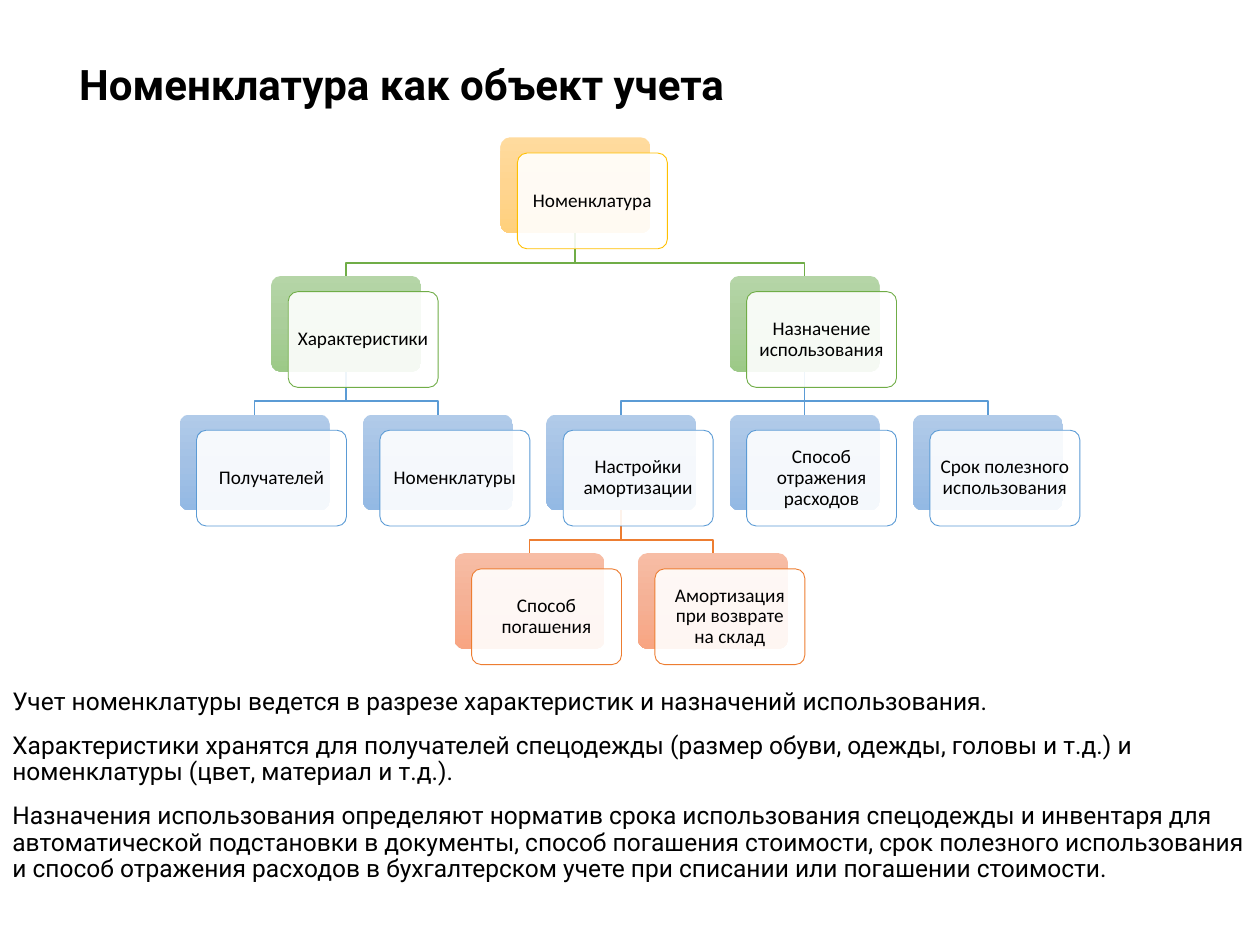
import copy
from dataclasses import dataclass

import pptx
import pptx.dml.color
import pptx.enum.shapes
import pptx.enum.text
import pptx.oxml.ns
import pptx.util
from lxml import etree

Inches = pptx.util.Inches
Pt = pptx.util.Pt
qn = pptx.oxml.ns.qn
rgb = pptx.dml.color.RGBColor.from_string
Kind = pptx.enum.shapes.MSO_SHAPE
Align = pptx.enum.text.PP_ALIGN
Anchor = pptx.enum.text.MSO_ANCHOR


@dataclass(frozen=True)
class Theme:
    ink: str = "000000"
    paper: str = "FFFFFF"
    font: str = "Roboto"
    card_font: str = "Calibri"
    head: int = 24
    body: int = 14
    card: int = 11
    # One entry per tree level: outline, and the three stops of the back card
    lines: tuple = ("FFC000", "70AD47", "5B9BD5", "ED7D31")
    fades: tuple = (
        ("FFDB9E", "FFD590", "FFD07C"),
        ("B5D5A7", "AACE9A", "9CC987"),
        ("B1CBE9", "A3C1E5", "93B9E4"),
        ("F7BDA5", "F5B196", "F8A582"),
    )


THEME = Theme()

CARD_W, CARD_H = 1.19, 0.76
LEFT, TOP = 2.02, 1.09  # centre of column 0, top of level 0
COL, ROW = 1.455, 1.1
SHIFT_X, SHIFT_Y = 0.135, 0.125
BEND = 0.235

# Label, column, level, index of the parent
NODES = [
    ("Номенклатура", 1.75, 0, None),
    ("Характеристики", 0.5, 1, 0),
    ("Назначение использования", 3, 1, 0),
    ("Получателей", 0, 2, 1),
    ("Номенклатуры", 1, 2, 1),
    ("Настройки амортизации", 2, 2, 2),
    ("Способ отражения расходов", 3, 2, 2),
    ("Срок полезного использования", 4, 2, 2),
    ("Способ погашения", 1.5, 3, 5),
    ("Амортизация при возврате на склад", 2.5, 3, 5),
]

TITLE = "Номенклатура как объект учета"
NOTES = [
    "Учет номенклатуры ведется в разрезе характеристик и назначений использования.",
    "Характеристики хранятся для получателей спецодежды (размер обуви, одежды, "
    "головы и т.д.) и номенклатуры (цвет, материал и т.д.).",
    "Назначения использования определяют норматив срока использования спецодежды "
    "и инвентаря для автоматической подстановки в документы, способ погашения "
    "стоимости, срок полезного использования и способ отражения расходов "
    "в бухгалтерском учете при списании или погашении стоимости.",
]


def place(col, level):
    """Return the centre x and the top y of a node's back card."""
    return LEFT + COL * col, TOP + ROW * level


def style(para, size, font, bold=False):
    para.line_spacing = 0.9
    para.font.size = Pt(size)
    para.font.name = font
    para.font.bold = bold
    para.font.color.rgb = rgb(THEME.ink)


def add_text(slide, box, texts, size, bold=False):
    frame = slide.shapes.add_textbox(*map(Inches, box)).text_frame
    frame.word_wrap = True
    for i, text in enumerate(texts):
        para = frame.add_paragraph() if i else frame.paragraphs[0]
        para.text = text
        para.space_before = Pt(10 if i else 0)
        style(para, size, THEME.font, bold)


def add_link(slide, start, end, color):
    (x1, y1), (x2, y2) = start, end
    if x1 == x2:
        link = slide.shapes.add_connector(
            pptx.enum.shapes.MSO_CONNECTOR.STRAIGHT, *map(Inches, (x1, y1, x2, y2)))
        etree.SubElement(link._element.spPr, qn("a:effectLst"))
    else:
        pen = slide.shapes.build_freeform(Inches(x1), Inches(y1))
        bend = y1 + BEND
        turns = [(x1, bend), (x2, bend), (x2, y2)]
        pen.add_line_segments([(Inches(x), Inches(y)) for x, y in turns], close=False)
        link = pen.convert_to_shape()
        link.fill.background()
        link.shadow.inherit = False
    link.line.color.rgb = rgb(color)
    link.line.width = Pt(1)


def add_card(slide, x, y):
    card = slide.shapes.add_shape(
        Kind.ROUNDED_RECTANGLE, *map(Inches, (x, y, CARD_W, CARD_H)))
    card.adjustments[0] = 0.1
    card.shadow.inherit = False
    return card


def fade(shape, colors):
    """Fill a shape from top to bottom with three evenly spaced colours."""
    shape.fill.gradient()
    shape.fill.gradient_angle = 270
    first = shape._element.spPr.find(".//" + qn("a:gs"))
    first.addnext(copy.deepcopy(first))
    for i, (stop, color) in enumerate(zip(shape.fill.gradient_stops, colors)):
        stop.position = i / 2
        stop.color.rgb = rgb(color)


def add_node(slide, label, col, level):
    mid, top = place(col, level)
    left = mid - CARD_W / 2
    back = add_card(slide, left, top)
    fade(back, THEME.fades[level])
    back.line.fill.background()

    front = add_card(slide, left + SHIFT_X, top + SHIFT_Y)
    front.fill.solid()
    front.fill.fore_color.rgb = rgb(THEME.paper)
    tint = front._element.spPr.find(qn("a:solidFill")).find(qn("a:srgbClr"))
    etree.SubElement(tint, qn("a:alpha"), val="90000")
    front.line.color.rgb = rgb(THEME.lines[level])
    front.line.width = Pt(0.5)

    frame = front.text_frame
    frame.word_wrap = True
    frame.vertical_anchor = Anchor.MIDDLE
    frame.margin_left = frame.margin_right = Inches(0.05)
    frame.margin_top = frame.margin_bottom = Inches(0.05)
    para = frame.paragraphs[0]
    para.text = label
    para.alignment = Align.CENTER
    style(para, THEME.card, THEME.card_font)


def add_tree(slide):
    for _, col, level, root in NODES:
        if root is not None:
            x, y = place(*NODES[root][1:3])
            add_link(slide, (x, y + CARD_H), place(col, level), THEME.lines[level])
    for label, col, level, _ in NODES:
        add_node(slide, label, col, level)


def main():
    deck = pptx.Presentation()
    deck.slide_width, deck.slide_height = Inches(10), Inches(7.5)
    slide = deck.slides.add_slide(deck.slide_layouts[6])
    add_text(slide, (0.53, 0.46, 8.98, 0.63), [TITLE], THEME.head, bold=True)
    add_text(slide, (0, 5.42, 10, 1.64), NOTES, THEME.body)
    add_tree(slide)
    deck.save("out.pptx")


if __name__ == "__main__":
    main()
